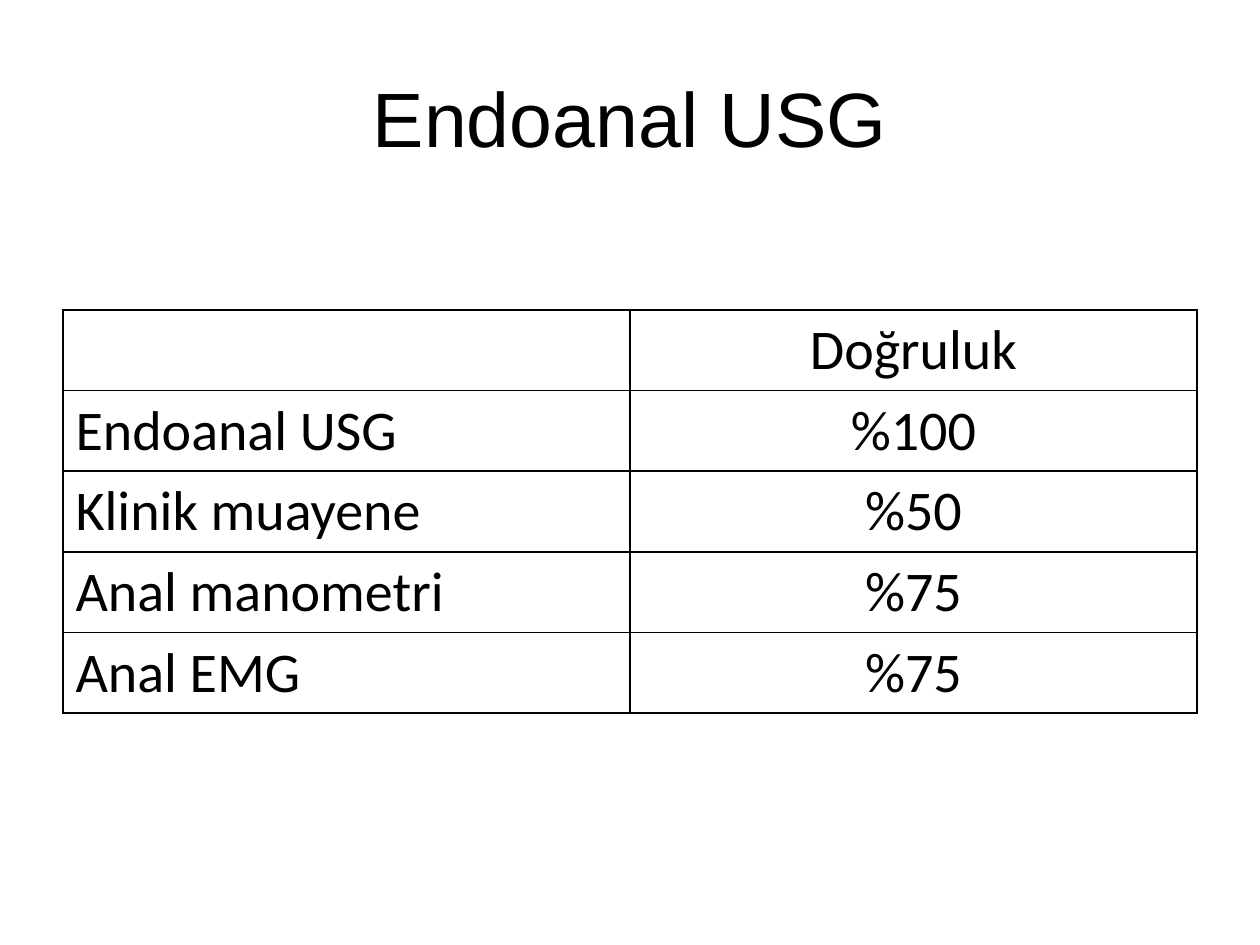
import dataclasses

import pptx
import pptx.dml.color
import pptx.enum.text
import pptx.oxml
import pptx.oxml.ns
import pptx.util

Inches = pptx.util.Inches
ALIGN = pptx.enum.text.PP_ALIGN
MIDDLE = pptx.enum.text.MSO_ANCHOR.MIDDLE


@dataclasses.dataclass(frozen=True)
class Theme:
    ink: str = "000000"
    paper: str = "FFFFFF"
    head_font: str = "Arial"
    head_size: int = 44
    body_font: str = "Calibri"
    body_size: int = 32
    rule: int = 1


THEME = Theme()

ROWS = [
    ("", "Doğruluk"),
    ("Endoanal USG", "%100"),
    ("Klinik muayene", "%50"),
    ("Anal manometri", "%75"),
    ("Anal EMG", "%75"),
]


def add_text(frame, text, font, size, align):
    para = frame.paragraphs[0]
    para.alignment = align
    run = para.add_run()
    run.text = text
    run.font.name = font
    run.font.size = pptx.util.Pt(size)
    run.font.color.rgb = pptx.dml.color.RGBColor.from_string(THEME.ink)


def add_title(slide, text):
    box = slide.shapes.add_textbox(Inches(0.5), Inches(0.3), Inches(9), Inches(1.25))
    frame = box.text_frame
    frame.word_wrap = True
    frame.vertical_anchor = MIDDLE
    add_text(frame, text, THEME.head_font, THEME.head_size, ALIGN.CENTER)


def add_rules(cell):
    props = cell._tc.get_or_add_tcPr()
    space = pptx.oxml.ns.nsdecls("a")
    width = pptx.util.Pt(THEME.rule)
    # Borders must come before the fill in the cell properties
    for place, side in enumerate(("lnL", "lnR", "lnT", "lnB")):
        line = pptx.oxml.parse_xml(
            f'<a:{side} {space} w="{width}"><a:solidFill>'
            f'<a:srgbClr val="{THEME.ink}"/></a:solidFill></a:{side}>'
        )
        props.insert(place, line)


def add_grid(slide, rows):
    high = Inches(0.64)
    shape = slide.shapes.add_table(
        len(rows), 2, Inches(0.5), Inches(2.46), Inches(9), high * len(rows)
    )
    table = shape.table
    table.first_row = False
    table.horz_banding = False
    for r, row in enumerate(rows):
        table.rows[r].height = high
        for c, text in enumerate(row):
            cell = table.cell(r, c)
            cell.fill.solid()
            cell.fill.fore_color.rgb = pptx.dml.color.RGBColor.from_string(THEME.paper)
            add_rules(cell)
            if text:
                align = ALIGN.CENTER if c else ALIGN.LEFT
                add_text(cell.text_frame, text, THEME.body_font, THEME.body_size, align)


def main():
    deck = pptx.Presentation()
    deck.slide_width = Inches(10)
    deck.slide_height = Inches(7.5)
    slide = deck.slides.add_slide(deck.slide_layouts[6])

    # Heading
    add_title(slide, "Endoanal USG")

    # Accuracy of each method
    add_grid(slide, ROWS)

    deck.save("out.pptx")


if __name__ == "__main__":
    main()
